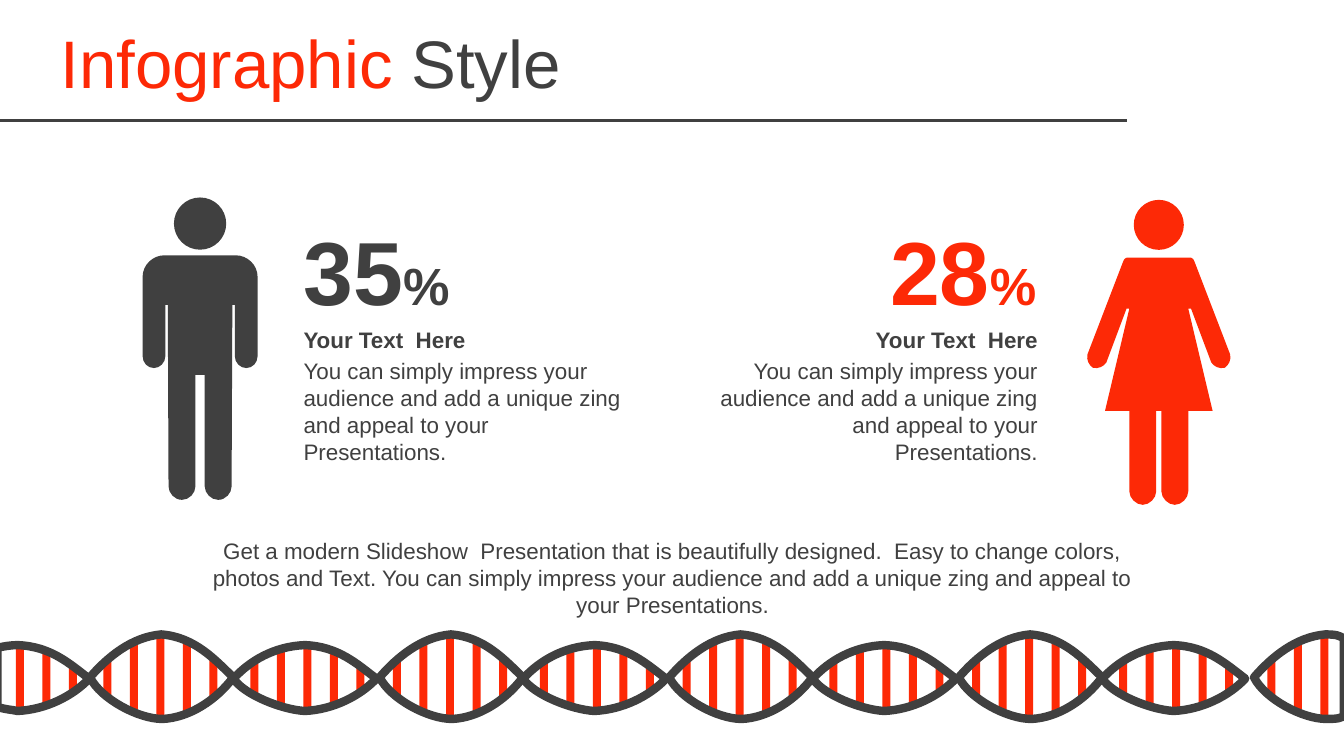
from dataclasses import dataclass

import pptx
import pptx.dml.color
import pptx.enum.shapes
import pptx.enum.text
import pptx.oxml.ns
import pptx.util

Pt = pptx.util.Pt
RGBColor = pptx.dml.color.RGBColor
Align = pptx.enum.text.PP_ALIGN
AutoSize = pptx.enum.text.MSO_AUTO_SIZE
qn = pptx.oxml.ns.qn


@dataclass(frozen=True)
class Theme:
    dark: RGBColor = RGBColor(0x40, 0x40, 0x40)
    accent: RGBColor = RGBColor(0xFD, 0x29, 0x06)
    font: str = "Arial"
    title: int = 36
    number: int = 48
    percent: int = 28
    body: int = 12


THEME = Theme()
SLIDE_WIDTH, SLIDE_HEIGHT = 720, 405

# Right halves of the figures, measured from the axis and the top of the head.
# Two values are a straight step, six values are a Bézier step.
MAN = [
    (0, 31), (19.1, 31), (25.2, 31, 30.8, 36, 30.8, 42.5), (30.8, 85),
    (30.8, 88.6, 28.1, 91.4, 24.7, 91.4), (21.6, 91.4, 18.6, 88.6, 18.6, 85),
    (18.6, 57.6), (17.3, 57.6), (16.9, 154.8),
    (16.9, 158.4, 13.7, 162, 9.7, 162), (5.8, 162, 2.5, 158.4, 2.5, 154.8),
    (2.5, 95),
]
WOMAN = [
    (0, 31), (12.6, 31), (18, 31, 18, 30.2, 19.4, 33.8), (38.2, 82.8),
    (38.9, 85.7, 37.4, 88.6, 35.3, 90), (32.4, 90.7, 29.5, 89.3, 28.1, 87.1),
    (17.3, 58.3), (15.8, 58.3), (28.8, 113), (15.8, 113), (15.8, 156.2),
    (15.8, 159.8, 12.2, 163.4, 8.6, 163.4), (5, 163.4, 1.4, 159.8, 1.4, 156.2),
    (1.4, 113),
]

# Lenses of the DNA strand, measured from the left tip.
WIDE_LENS = [(0, 0), (9.4, -10.8, 22.3, -21.6, 38.2, -23), (56.2, -21.6, 67, -9.4, 76.8, 0),
             (67.7, 12.2, 53.3, 21.6, 38.9, 22.3), (25.9, 22.3, 5.8, 11.5, 0, 0)]
NARROW_LENS = [(0, 0), (8.6, -9.4, 21.6, -17.3, 38.2, -18), (56.2, -17.3, 66.2, -7.9, 76.6, 0),
               (67.7, 9.4, 53.3, 16.6, 38.2, 17.3), (25.9, 16.6, 5.8, 8.6, 0, 0)]
# Lenses cut by the left and the right edge of the slide.
LEFT_LENS = [NARROW_LENS[1][-2:], *NARROW_LENS[2:4],
             (35.3, 16.6, 31.7, 16.6, 27.4, 15.1), (27.4, -16.6),
             (31, -17.3, 34.6, -18, 38.2, -18)]
RIGHT_LENS = [*WIDE_LENS[:2], (44.6, -23, 45.4, -22.3, 48.2, -20.9), (48.2, 20.9),
              (46.1, 21.6, 46.1, 22.3, 38.9, 22.3), WIDE_LENS[4]]
WIDE = {"axis": 362.9, "first_bar": 7.2,
        "bars": [(353.5, 20.2), (343.4, 36.7), (339.8, 43.9), (343.4, 39.6), (352.8, 20.2)]}
NARROW = {"axis": 363.6, "first_bar": 9,
          "bars": [(355, 17.3), (348.5, 29.5), (344.9, 35.3), (348.5, 29.5), (356.4, 14.4)]}
BAR_PITCH, BAR_WIDTH = 14.2, 4.3
LENS_PERIOD = 155.15


def set_values(target, values):
    for name, value in values.items():
        setattr(target, name, value)


def pairs(step):
    return list(zip(step[::2], step[1::2]))


def mirror(steps):
    """Walk the steps backwards on the other side of the axis."""
    x, y = pairs(steps[-1])[-1]
    mirrored = [(-x, y)]
    for previous, step in reversed(list(zip(steps, steps[1:]))):
        nodes = pairs(previous)[-1:] + pairs(step)[:-1]
        mirrored.append(tuple(value for x, y in reversed(nodes) for value in (-x, y)))
    return mirrored


def bend(shape, steps):
    """Join the three line segments of each Bézier step into one curve."""
    segments = iter(list(shape._element.iter(qn("a:lnTo"))))
    for step in steps:
        parts = [next(segments) for _ in pairs(step)]
        if len(parts) == 3:
            curve = parts[0].makeelement(qn("a:cubicBezTo"), {})
            parts[0].addprevious(curve)
            for part in parts:
                curve.append(part[0])
                part.getparent().remove(part)


def add_outline(shapes, contours, left, top):
    """Draw closed contours as one freeform."""
    builder = None
    for contour in contours:
        start, *rest = [(Pt(left + x), Pt(top + y)) for step in contour for x, y in pairs(step)]
        if builder is None:
            builder = shapes.build_freeform(*start)
        else:
            builder.move_to(*start)
        builder.add_line_segments(rest, close=False)
        builder.add_line_segments([], close=True)
    shape = builder.convert_to_shape()
    shape.shadow.inherit = False
    bend(shape, [step for contour in contours for step in contour[1:]])
    return shape


def paint(shape, color):
    shape.fill.solid()
    shape.fill.fore_color.rgb = color
    shape.line.fill.background()


def add_figure(shapes, half, axis, top, radius, color):
    handle = 0.55 * radius
    head = [(0, 0), (handle, 0, radius, radius - handle, radius, radius),
            (radius, radius + handle, handle, 2 * radius, 0, 2 * radius)]
    contours = [part + mirror(part) for part in (half, head)]
    paint(add_outline(shapes, contours, axis, top), color)


def write_runs(paragraph, runs):
    for text, size, color, bold in runs:
        run = paragraph.add_run()
        run.text = text
        set_values(run.font, {"name": THEME.font, "size": Pt(size), "bold": bold})
        run.font.color.rgb = color


def add_text(shapes, box, runs, alignment=Align.LEFT, wrap=True):
    shape = shapes.add_textbox(*map(Pt, box))
    set_values(shape.text_frame, {"word_wrap": wrap, "auto_size": AutoSize.SHAPE_TO_FIT_TEXT})
    paragraph = shape.text_frame.paragraphs[0]
    paragraph.alignment = alignment
    write_runs(paragraph, runs)


def add_title(slide):
    title = slide.shapes.title
    set_values(title, {"left": Pt(25.2), "top": Pt(10.1), "width": Pt(578.2), "height": Pt(45.4)})
    set_values(title.text_frame, {"word_wrap": True, "auto_size": AutoSize.NONE,
                                  "vertical_anchor": pptx.enum.text.MSO_ANCHOR.MIDDLE})
    paragraph = title.text_frame.paragraphs[0]
    set_values(paragraph, {"alignment": Align.LEFT, "space_before": Pt(6)})
    write_runs(paragraph, [("Infographic ", THEME.title, THEME.accent, False),
                           ("Style", THEME.title, THEME.dark, False)])


def add_rule(shapes):
    rule = shapes.add_connector(pptx.enum.shapes.MSO_CONNECTOR.STRAIGHT,
                                Pt(-0.7), Pt(64.4), Pt(604), Pt(64.4))
    rule.line.color.rgb = THEME.dark
    rule.line.width = Pt(1.5)
    properties = rule._element.spPr
    properties.append(properties.makeelement(qn("a:effectLst"), {}))


def add_statistic(shapes, number, number_left, text_left, color, alignment):
    add_text(shapes, (number_left, 112.3, 93.6, 65.5),
             [(number, THEME.number, color, True), ("%", THEME.percent, color, True)], wrap=False)
    group = shapes.add_group_shape().shapes
    add_text(group, (text_left, 187.9, 185.8, 65.5),
             [("You can simply impress your audience and add a unique zing "
               "and appeal to your Presentations.", THEME.body, THEME.dark, False)], alignment)
    add_text(group, (text_left, 171.4, 185.8, 21.6),
             [("Your Text  Here", THEME.body, THEME.dark, True)], alignment)


def add_lens(shapes, kind, outline, left):
    """Draw the bars that lie on the slide, then the outline around them."""
    for index, (top, height) in enumerate(kind["bars"]):
        bar_left = left + kind["first_bar"] + index * BAR_PITCH
        if 0 <= bar_left < SLIDE_WIDTH:
            bar = shapes.add_shape(pptx.enum.shapes.MSO_SHAPE.RECTANGLE,
                                   Pt(bar_left), Pt(top), Pt(BAR_WIDTH), Pt(height))
            bar.shadow.inherit = False
            paint(bar, THEME.accent)
    lens = add_outline(shapes, [outline], left, kind["axis"])
    lens.fill.background()
    lens.line.color.rgb = THEME.dark
    lens.line.width = Pt(4.5)


def add_strand(shapes):
    group = shapes.add_group_shape().shapes
    for index in range(4):
        add_lens(group, WIDE, WIDE_LENS, 48.2 + index * LENS_PERIOD)
        add_lens(group, NARROW, NARROW_LENS, 125.1 + index * LENS_PERIOD)
    add_lens(group, NARROW, LEFT_LENS, -28.8)
    add_lens(group, WIDE, RIGHT_LENS, 671.8)


def main():
    presentation = pptx.Presentation()
    set_values(presentation, {"slide_width": Pt(SLIDE_WIDTH), "slide_height": Pt(SLIDE_HEIGHT)})
    slide = presentation.slides.add_slide(presentation.slide_layouts[5])
    shapes = slide.shapes
    # Heading
    add_rule(shapes)
    add_title(slide)
    # Figures and their statistics
    add_figure(shapes, MAN, 107.2, 105.8, 14, THEME.dark)
    add_figure(shapes, WOMAN, 620.8, 107.1, 13.4, THEME.accent)
    add_statistic(shapes, "35", 155.5, 155.5, THEME.dark, Align.LEFT)
    add_statistic(shapes, "28", 469.8, 377.3, THEME.accent, Align.RIGHT)
    # Closing text and DNA strand
    add_text(shapes, (97.2, 284.4, 526.3, 51.1),
             [("Get a modern Slideshow  Presentation that is beautifully designed.  Easy to change "
               "colors, photos and Text. You can simply impress your audience and add a unique "
               "zing and appeal to your Presentations.", THEME.body, THEME.dark, False)],
             Align.CENTER)
    add_strand(shapes)
    presentation.save("out.pptx")


if __name__ == "__main__":
    main()
